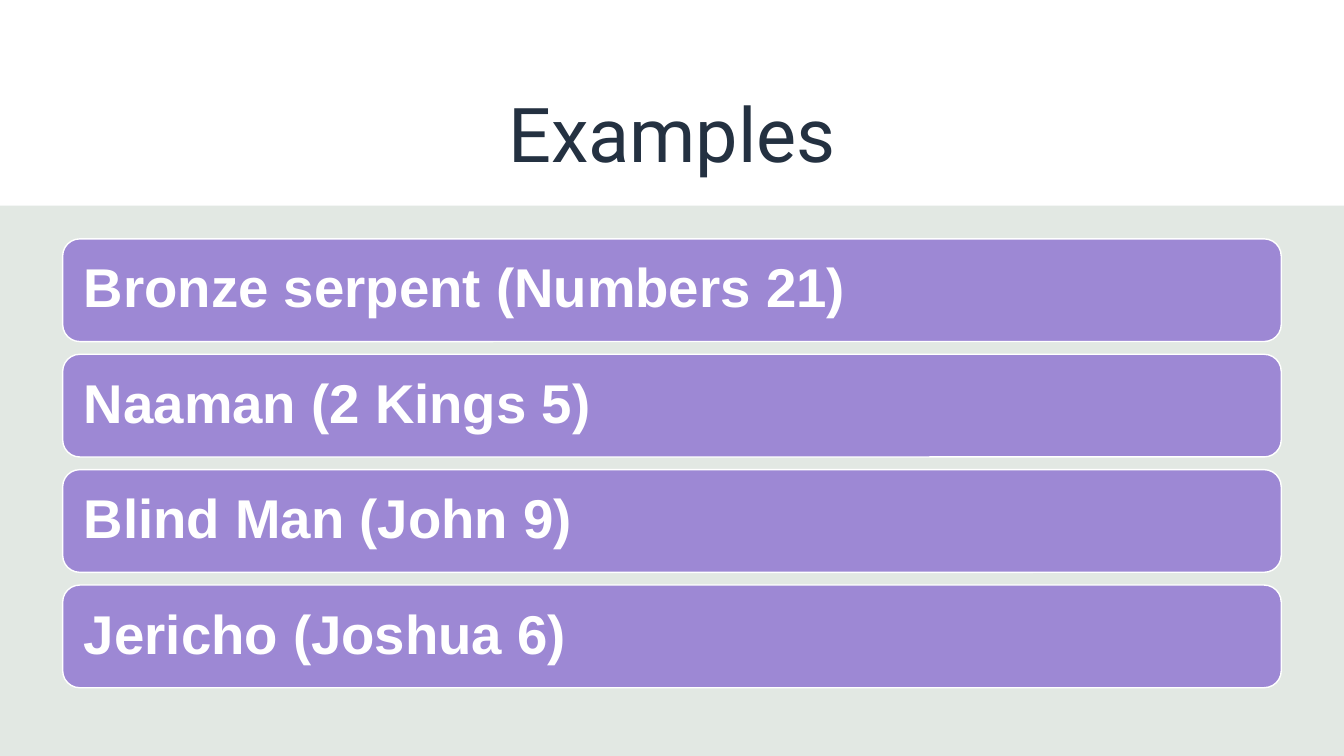
from pptx import Presentation
from pptx.dml.color import RGBColor
from pptx.enum.shapes import MSO_SHAPE as Preset
from pptx.enum.text import MSO_ANCHOR as Anchor, PP_ALIGN as Align
from pptx.util import Cm, Pt

WHITE = RGBColor(0xFF, 0xFF, 0xFF)
NAVY = RGBColor(0x24, 0x31, 0x41)
SAGE = RGBColor(0xE2, 0xE8, 0xE3)
PURPLE = RGBColor(0x9D, 0x88, 0xD4)

PAGE_WIDTH, PAGE_HEIGHT = Cm(33.87), Cm(19.05)
PANEL_TOP = Cm(5.18)
EXAMPLES = [
    "Bronze serpent (Numbers 21)",
    "Naaman (2 Kings 5)",
    "Blind Man (John 9)",
    "Jericho (Joshua 6)",
]


def add_filled(page, preset, left, top, width, height, color, outline=None):
    shape = page.shapes.add_shape(preset, left, top, width, height)
    shape.shadow.inherit = False
    shape.fill.solid()
    shape.fill.fore_color.rgb = color
    if outline is None:
        shape.line.fill.background()
    else:
        shape.line.color.rgb = outline
        shape.line.width = Pt(1)
    return shape


def write(box, text, *, font, size, color, bold=False, align=Align.LEFT,
          inset=Cm(0.25), spacing=1.0):
    frame = box.text_frame
    frame.word_wrap = True
    frame.vertical_anchor = Anchor.MIDDLE
    frame.margin_left = frame.margin_right = inset
    frame.margin_top = frame.margin_bottom = inset
    para = frame.paragraphs[0]
    para.alignment = align
    para.line_spacing = spacing
    span = para.add_run()
    span.text = text
    span.font.name = font
    span.font.size = Pt(size)
    span.font.bold = bold
    span.font.color.rgb = color


def add_heading(page, left, top, width, height, text):
    add_filled(page, Preset.RECTANGLE, left, top, width, height, WHITE)
    box = page.shapes.add_textbox(left + Cm(3.96), top + Cm(1.96),
                                  width - 2 * Cm(3.96), Cm(2.77))
    write(box, text, font="Roboto", size=54, color=NAVY, align=Align.CENTER)


def add_example_panel(page, left, top, width, height, examples):
    """Draw the tinted panel with one equal bar per example."""
    add_filled(page, Preset.RECTANGLE, left, top, width, height, SAGE)
    side, above, below, gap = Cm(1.58), Cm(0.84), Cm(1.72), Cm(0.32)
    pitch = (height - above - below + gap) // len(examples)
    for row, example in enumerate(examples):
        bar = add_filled(page, Preset.ROUNDED_RECTANGLE, left + side,
                         top + above + row * pitch, width - 2 * side,
                         pitch - gap, PURPLE, outline=WHITE)
        write(bar, example, font="Arial", size=39, color=WHITE, bold=True,
              inset=Cm(0.41), spacing=0.9)


def main():
    deck = Presentation()
    deck.slide_width, deck.slide_height = PAGE_WIDTH, PAGE_HEIGHT
    page = deck.slides.add_slide(deck.slide_layouts[6])
    add_heading(page, 0, 0, PAGE_WIDTH, PAGE_HEIGHT, "Examples")
    add_example_panel(page, 0, PANEL_TOP, PAGE_WIDTH,
                      PAGE_HEIGHT - PANEL_TOP, EXAMPLES)
    deck.save("out.pptx")


if __name__ == "__main__":
    main()
